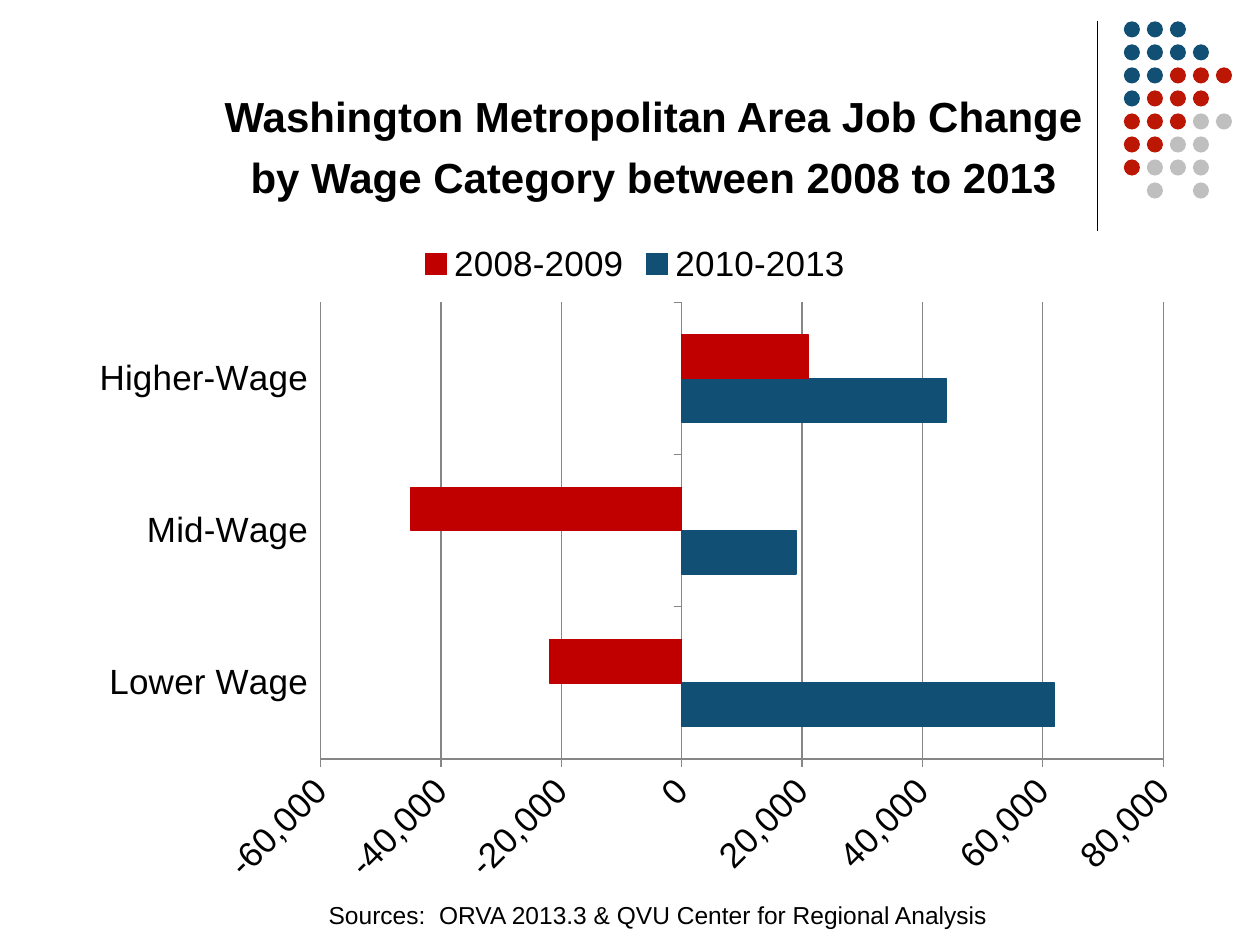
from lxml.etree import SubElement
from pptx import Presentation
from pptx.chart.data import CategoryChartData
from pptx.dml.color import RGBColor
from pptx.enum.chart import XL_CHART_TYPE as ChartType
from pptx.enum.chart import XL_LEGEND_POSITION as LegendPosition
from pptx.enum.chart import XL_TICK_LABEL_POSITION as LabelPosition
from pptx.enum.chart import XL_TICK_MARK as TickMark
from pptx.enum.shapes import MSO_CONNECTOR as Connector
from pptx.enum.shapes import MSO_SHAPE as Shape
from pptx.enum.text import MSO_ANCHOR as Anchor
from pptx.enum.text import PP_ALIGN as Align
from pptx.oxml import parse_xml
from pptx.oxml.ns import nsdecls, qn
from pptx.util import Pt

COLORS = {
    "black": "000000",
    "blue": "124F74",
    "dot red": "BC1604",
    "bar red": "C00000",
    "silver": "BFBFBF",
    "grid": "868686",
}
DOT_COLORS = {"B": "blue", "R": "dot red", "S": "silver"}
DOT_ROWS = ["BBB", "BBBB", "BBRRR", "BRRR", "RRRSS", "RRSS", "RSSS", " S S"]
DOT_LEFT, DOT_TOP, DOT_PITCH, DOT_SIZE = 642.2, 12.2, 13.15, 9.2

TITLE_LINES = [
    "Washington Metropolitan Area Job Change",
    "by Wage Category between 2008 to 2013",
]
CATEGORIES = ["Lower Wage", "Mid-Wage", "Higher-Wage"]
SERIES = [
    ("2010-2013", [62000, 19000, 44000], "blue"),
    ("2008-2009", [-22000, -45000, 21000], "bar red"),
]
PLOT_LAYOUT = {"x": 0.217, "y": 0.113, "w": 0.75, "h": 0.68}
PLOT_LAYOUT = {key: round(value, 2) for key, value in PLOT_LAYOUT.items()}


def color(name):
    return RGBColor.from_string(COLORS[name])


class SlideBuilder:
    font_name = "Arial"

    def __init__(self, slide):
        self.slide = slide

    def style_font(self, font, size, bold=False):
        font.name = self.font_name
        font.size = Pt(size)
        font.bold = bold
        font.color.rgb = color("black")

    def style_line(self, line, name):
        line.color.rgb = color(name)
        line.width = Pt(0.75)

    def place(self, shape, left, top, width, height):
        shape.left, shape.top = Pt(left), Pt(top)
        shape.width, shape.height = Pt(width), Pt(height)

    def title(self, lines, box):
        shape = self.slide.shapes.title
        self.place(shape, *box)
        frame = shape.text_frame
        frame.text = "\n".join(lines)
        frame.word_wrap = True
        frame.vertical_anchor = Anchor.TOP
        frame.margin_left, frame.margin_right = Pt(21), Pt(0)
        frame.margin_top, frame.margin_bottom = Pt(9.5), Pt(0)
        for paragraph in frame.paragraphs:
            paragraph.alignment = Align.CENTER
            paragraph.line_spacing = Pt(35)
            paragraph.space_before = Pt(0)
            self.style_font(paragraph.font, 24, bold=True)

    def text(self, words, box, size):
        frame = self.slide.shapes.add_textbox(*map(Pt, box)).text_frame
        frame.word_wrap = True
        paragraph = frame.paragraphs[0]
        paragraph.text = words
        paragraph.alignment = Align.CENTER
        self.style_font(paragraph.font, size)

    def line(self, start, end):
        connector = self.slide.shapes.add_connector(
            Connector.STRAIGHT, *map(Pt, start + end))
        self.style_line(connector.line, "black")
        SubElement(connector._element.spPr, qn("a:effectLst"))

    def dot(self, left, top, name):
        shape = self.slide.shapes.add_shape(
            Shape.OVAL, Pt(left), Pt(top), Pt(DOT_SIZE), Pt(DOT_SIZE))
        shape.shadow.inherit = False
        shape.fill.solid()
        shape.fill.fore_color.rgb = color(name)
        shape.line.fill.background()

    def bar_chart(self, box):
        data = CategoryChartData(number_format="#,##0")
        data.categories = CATEGORIES
        for name, values, _ in SERIES:
            data.add_series(name, values)
        chart = self.slide.shapes.add_chart(
            ChartType.BAR_CLUSTERED, *map(Pt, box), data).chart
        chart.has_title = False
        self.style_font(chart.font, 10)
        chart.has_legend = True
        chart.legend.position = LegendPosition.TOP
        chart.legend.include_in_layout = False
        self.style_font(chart.legend.font, 20)

        plot = chart.plots[0]
        plot.gap_width = 150
        plot.vary_by_categories = False
        for series, (_, _, name) in zip(plot.series, SERIES):
            series.invert_if_negative = False
            series.format.fill.solid()
            series.format.fill.fore_color.rgb = color(name)
            self.style_line(series.format.line, name)

        for axis in (chart.category_axis, chart.value_axis):
            axis.major_tick_mark = TickMark.OUTSIDE
            axis.minor_tick_mark = TickMark.NONE
            self.style_line(axis.format.line, "grid")
            self.style_font(axis.tick_labels.font, 20)
        chart.category_axis.tick_label_position = LabelPosition.LOW
        value_axis = chart.value_axis
        value_axis.minimum_scale, value_axis.maximum_scale = -60000, 80000
        value_axis.major_unit = 20000
        value_axis.has_major_gridlines = True
        self.style_line(value_axis.major_gridlines.format.line, "grid")
        value_axis.tick_labels.number_format = "#,##0"
        value_axis.tick_labels.number_format_is_linked = False
        value_axis._element.txPr.bodyPr.set("rot", "-2700000")
        self.plot_layout(chart)

    def plot_layout(self, chart):
        area = chart._chartSpace.chart.plotArea
        for old in area.findall(qn("c:layout")):
            area.remove(old)
        sizes = "".join(
            f'<c:{key} val="{value}"/>' for key, value in PLOT_LAYOUT.items())
        area.insert(0, parse_xml(
            f'<c:layout {nsdecls("c")}><c:manualLayout>'
            '<c:layoutTarget val="inner"/><c:xMode val="edge"/>'
            f'<c:yMode val="edge"/>{sizes}</c:manualLayout></c:layout>'))


def main():
    presentation = Presentation()
    presentation.slide_width, presentation.slide_height = Pt(720), Pt(540)
    builder = SlideBuilder(
        presentation.slides.add_slide(presentation.slide_layouts[5]))
    builder.line((627, 12), (627, 132))
    for row, codes in enumerate(DOT_ROWS):
        for column, code in enumerate(codes):
            if code in DOT_COLORS:
                builder.dot(DOT_LEFT + column * DOT_PITCH,
                            DOT_TOP + row * DOT_PITCH, DOT_COLORS[code])
    builder.title(TITLE_LINES, (36, 36, 654, 85))
    builder.bar_chart((42, 130.5, 642, 384))
    builder.text("Sources:  ORVA 2013.3 & QVU Center for Regional Analysis",
                 (22, 510.5, 708, 24.5), 14)
    presentation.save("out.pptx")


if __name__ == "__main__":
    main()
